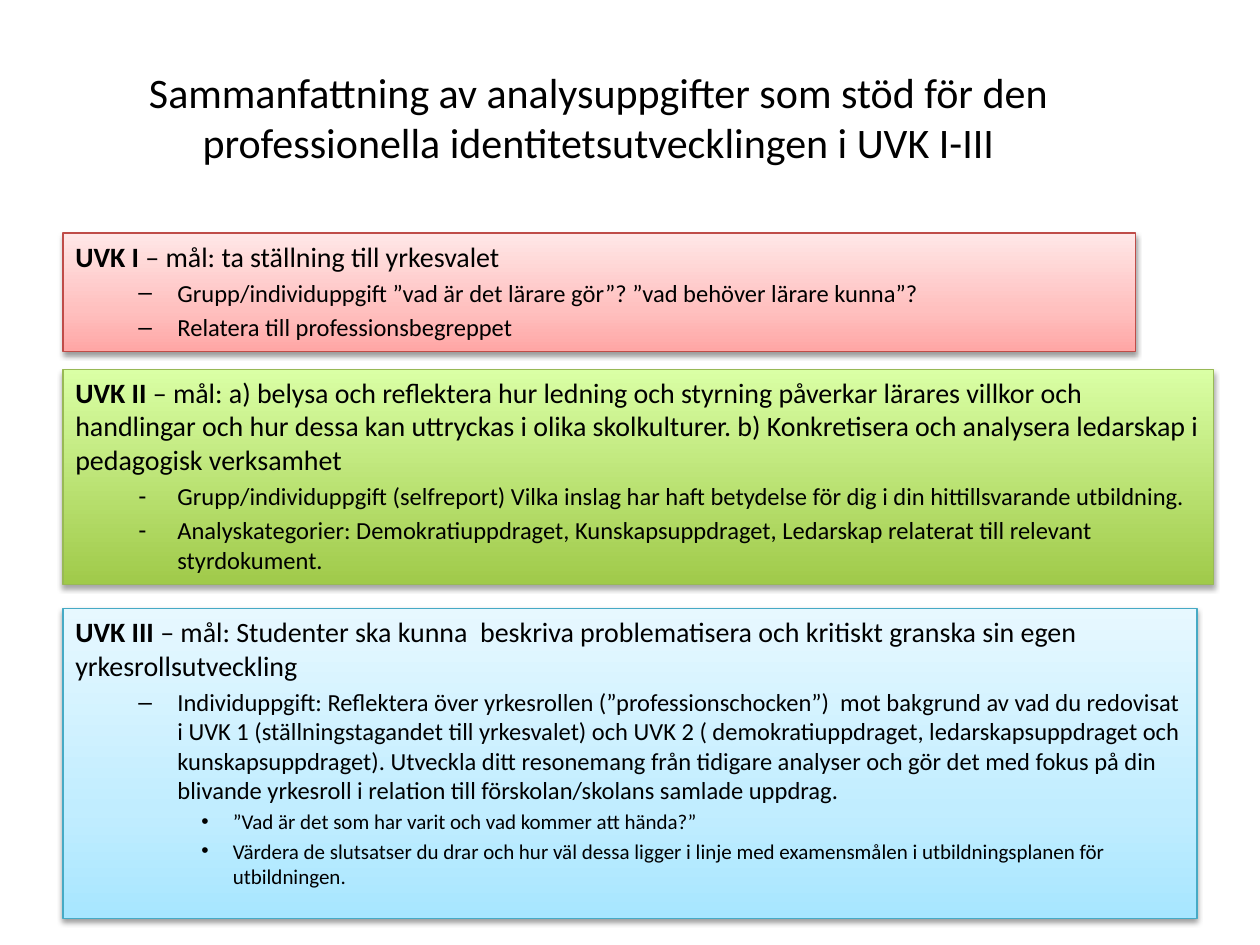
import pptx
import pptx.dml.color
import pptx.enum.shapes
import pptx.enum.text
import pptx.oxml
import pptx.oxml.ns
import pptx.util
import lxml.etree

Inches, Pt = pptx.util.Inches, pptx.util.Pt
qn = pptx.oxml.ns.qn
MSO_ANCHOR = pptx.enum.text.MSO_ANCHOR
PP_ALIGN = pptx.enum.text.PP_ALIGN
AUTO_SIZE = pptx.enum.text.MSO_AUTO_SIZE

# Content
HEADING = ("Sammanfattning av analysuppgifter som stöd för den "
           "professionella identitetsutvecklingen i UVK I-III")

# Each course: goal, tasks as (level, bullet, text), and the look of its panel
COURSES = [
    dict(name="UVK I ", goal="– mål: ta ställning till yrkesvalet",
         tasks=[(1, "–", "Grupp/individuppgift ”vad är det lärare gör”? "
                         "”vad behöver lärare kunna”?"),
                (1, "–", "Relatera till professionsbegreppet")],
         top=1.85, width=8.51, height=0.94, grow=True, outline="BF4C48",
         gradient=[(0, "FFA6A5"), (35, "FFC0BF"), (100, "FFE7E7")],
         shadow=(38, 1.6)),
    dict(name="UVK II ",
         goal="– mål: a) belysa och reflektera hur ledning och styrning påverkar "
              "lärares villkor och handlingar och hur dessa kan uttryckas i olika "
              "skolkulturer. b) Konkretisera och analysera ledarskap i pedagogisk "
              "verksamhet",
         tasks=[(1, "-", "Grupp/individuppgift (selfreport) Vilka inslag har haft "
                         "betydelse för dig i din hittillsvarande utbildning."),
                (1, "-", "Analyskategorier: Demokratiuppdraget, Kunskapsuppdraget, "
                         "Ledarskap relaterat till relevant styrdokument.")],
         top=2.93, width=9.13, height=1.71, grow=True, outline="98B955",
         gradient=[(0, "A0CA4A"), (100, "DAFFA5")],
         shadow=(35, 1.8)),
    dict(name="UVK III ",
         goal="– mål: Studenter ska kunna  beskriva problematisera och kritiskt "
              "granska sin egen yrkesrollsutveckling",
         tasks=[(1, "–", "Individuppgift: Reflektera över yrkesrollen "
                         "(”professionschocken”)  mot bakgrund av vad du redovisat i "
                         "UVK 1 (ställningstagandet till yrkesvalet) och UVK 2 ( "
                         "demokratiuppdraget, ledarskapsuppdraget och "
                         "kunskapsuppdraget). Utveckla ditt resonemang från tidigare "
                         "analyser och gör det med fokus på din blivande yrkesroll i "
                         "relation till förskolan/skolans samlade uppdrag."),
                (2, "•", "”Vad är det som har varit och vad kommer att hända?”"),
                (2, "•", "Värdera de slutsatser du drar och hur väl dessa ligger i "
                         "linje med examensmålen i utbildningsplanen för "
                         "utbildningen.")],
         top=4.83, width=9, height=2.46, grow=False, outline="46AAC5",
         gradient=[(0, "A7E6FF"), (35, "C1EDFF"), (100, "E7F8FF")],
         shadow=(38, 1.6)),
]

LEFT = 0.5
SIZES = [16, 14, 12]                                # points per outline level
INDENTS = [(0, 0), (0.81, -0.31), (1.25, -0.25)]    # margin and hanging, inches


def rgb(value):
    return pptx.dml.color.RGBColor.from_string(value)


def add_child(parent, tag, **attributes):
    child = lxml.etree.SubElement(parent, qn(tag))
    for key, value in attributes.items():
        child.set(key, str(value))
    return child


def add_color(parent, value, alpha=None):
    color = add_child(parent, "a:srgbClr", val=value)
    if alpha is not None:
        add_child(color, "a:alpha", val=alpha * 1000)


def write(paragraph, text, size=16, bold=False, color="000000"):
    run = paragraph.add_run()
    run.text = text
    run.font.name = "Calibri"
    run.font.size = Pt(size)
    run.font.bold = bold
    run.font.color.rgb = rgb(color)


def format_level(paragraph, level, bullet=None):
    paragraph.alignment = PP_ALIGN.LEFT
    paragraph.level = level
    paragraph.space_before = Pt(round(0.2 * SIZES[level], 1))
    margin, hanging = INDENTS[level]
    properties = paragraph._p.get_or_add_pPr()
    properties.set("marL", str(Inches(margin)))
    properties.set("indent", str(Inches(hanging)))
    if bullet:
        add_child(properties, "a:buFont", typeface="Arial")
        add_child(properties, "a:buChar", char=bullet)


def fill_gradient(panel, stops):
    panel.fill.gradient()
    panel.fill.gradient_angle = 90
    stop_list = panel._element.spPr.find(".//" + qn("a:gsLst"))
    for stop in list(stop_list):
        stop_list.remove(stop)
    for position, color in stops:
        add_color(add_child(stop_list, "a:gs", pos=position * 1000), color)


def cast_shadow(panel, alpha, distance):
    panel.shadow.inherit = False
    effects = panel._element.spPr.find(qn("a:effectLst"))
    shadow = add_child(effects, "a:outerShdw", blurRad=Pt(3.1), dist=Pt(distance),
                       dir=90 * 60000, rotWithShape=0)
    add_color(shadow, "000000", alpha)


def add_course(slide, course):
    panel = slide.shapes.add_shape(
        pptx.enum.shapes.MSO_SHAPE.RECTANGLE, Inches(LEFT), Inches(course["top"]),
        Inches(course["width"]), Inches(course["height"]))
    fill_gradient(panel, course["gradient"])
    panel.line.color.rgb = rgb(course["outline"])
    panel.line.width = Pt(0.75)
    cast_shadow(panel, *course["shadow"])

    frame = panel.text_frame
    frame.word_wrap = True
    frame.vertical_anchor = MSO_ANCHOR.TOP
    frame.auto_size = AUTO_SIZE.SHAPE_TO_FIT_TEXT if course["grow"] else AUTO_SIZE.NONE
    goal = frame.paragraphs[0]
    format_level(goal, 0)
    write(goal, course["name"], bold=True)
    write(goal, course["goal"])
    for level, bullet, text in course["tasks"]:
        task = frame.add_paragraph()
        format_level(task, level, bullet)
        write(task, text, size=SIZES[level])


def main():
    deck = pptx.Presentation()
    deck.slide_width, deck.slide_height = Inches(10), Inches(7.5)
    slide = deck.slides.add_slide(deck.slide_layouts[6])

    # Heading
    heading = slide.shapes.add_textbox(Inches(0.25), Inches(0.3), Inches(9), Inches(1.25))
    heading.text_frame.word_wrap = True
    heading.text_frame.vertical_anchor = MSO_ANCHOR.MIDDLE
    heading.text_frame.paragraphs[0].alignment = PP_ALIGN.CENTER
    write(heading.text_frame.paragraphs[0], HEADING, size=24)

    # Course panels
    for course in COURSES:
        add_course(slide, course)
    deck.save("out.pptx")


if __name__ == "__main__":
    main()
